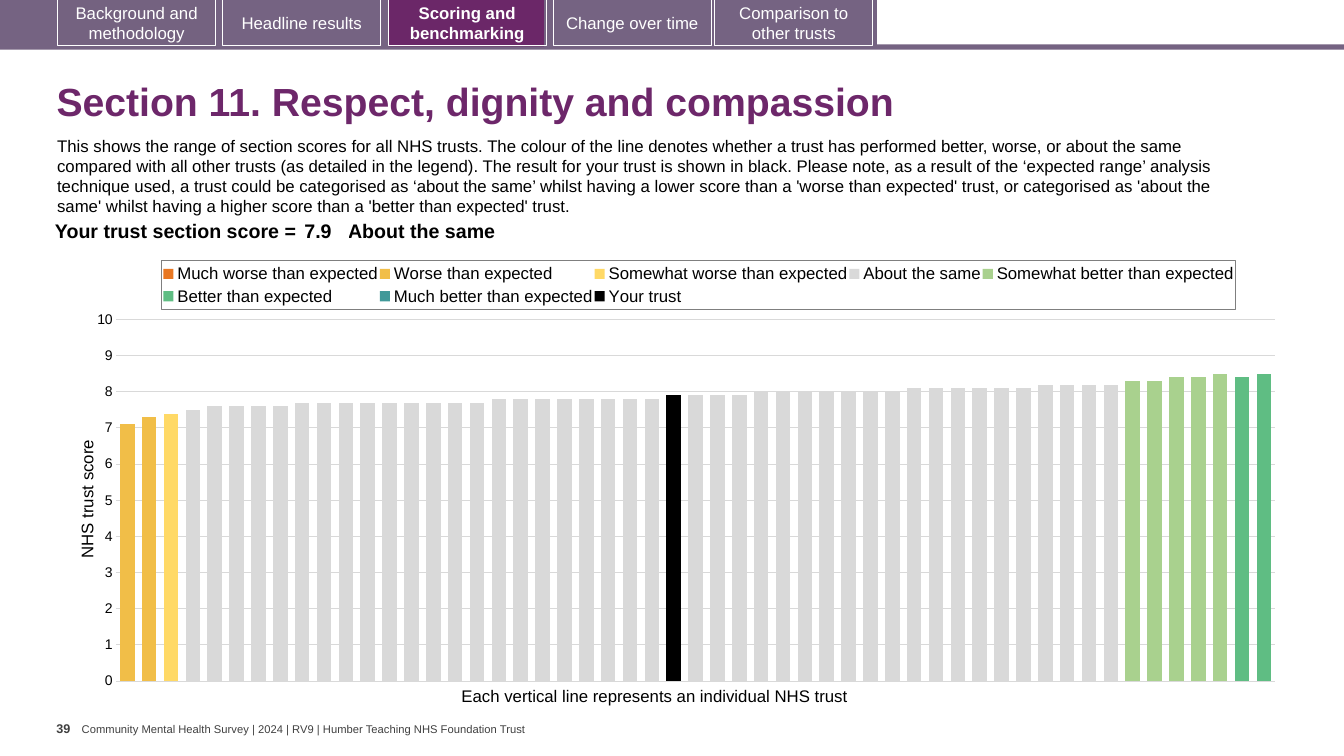
import copy
import lxml.etree
import pptx
import pptx.util
import pptx.chart.data
import pptx.dml.color
import pptx.enum.chart
import pptx.enum.shapes
import pptx.enum.text
import pptx.oxml
import pptx.oxml.ns

Cm = pptx.util.Cm
Pt = pptx.util.Pt
Rgb = pptx.dml.color.RGBColor.from_string
Align = pptx.enum.text.PP_ALIGN
Mid = pptx.enum.text.MSO_ANCHOR.MIDDLE
qn = pptx.oxml.ns.qn


class Look:
    face = "Arial"
    black, white, grey = "000000", "FFFFFF", "404040"
    purple, mauve, dusk, plum = "6D276A", "756382", "746280", "6B2768"
    grid, frame = "D9D9D9", "7F7F7F"
    title, score, text, tick, page, foot = 28, 14, 12, 10, 9, 8


def style(font, size, color, bold=False):
    font.name, font.size, font.bold = Look.face, Pt(size), bold
    font.color.rgb = Rgb(color)


def place(node, index, box, inner=False):
    for old in node.findall(qn("c:layout")):
        node.remove(old)
    layout = lxml.etree.Element(qn("c:layout"))
    manual = lxml.etree.SubElement(layout, qn("c:manualLayout"))
    pairs = [("layoutTarget", "inner")] if inner else []
    pairs += [("xMode", "edge"), ("yMode", "edge")] + list(zip("xywh", box))
    for tag, val in pairs:
        lxml.etree.SubElement(manual, qn("c:" + tag)).set("val", str(val))
    node.insert(index, layout)


deck = pptx.Presentation()
deck.slide_width, deck.slide_height = Cm(33.87), Cm(19.05)
slide = deck.slides.add_slide(deck.slide_layouts[5])
shapes = slide.shapes
rect = pptx.enum.shapes.MSO_SHAPE.RECTANGLE

bars = [
    (0, 1.12, 33.87, 0.13, Look.mauve),
    (0, 0, 22.1, 1.19, Look.mauve),
    (1.5, 0, 3.91, 1.17, Look.dusk),
    (9.8, 0, 3.91, 1.17, Look.plum),
]
for x, y, w, h, color in bars:
    bar = shapes.add_shape(rect, Cm(x), Cm(y), Cm(w), Cm(h))
    bar.shadow.inherit = False
    bar.fill.solid()
    bar.fill.fore_color.rgb = Rgb(color)
    bar.line.fill.background()

tabs = [
    (1.45, "Background and methodology", Look.dusk),
    (5.61, "Headline results", None),
    (9.78, "Scoring and benchmarking", None),
    (13.94, "Change over time", Look.mauve),
    (18.01, "Comparison to other trusts", Look.mauve),
]
for x, words, color in tabs:
    tab = shapes.add_shape(rect, Cm(x), Cm(-0.03), Cm(3.99), Cm(1.19))
    tab.shadow.inherit = False
    if color:
        tab.fill.solid()
        tab.fill.fore_color.rgb = Rgb(color)
    else:
        tab.fill.background()
    tab.line.color.rgb = Rgb(Look.white)
    tab.line.width = Pt(0.75)
    tab.text_frame.text = words
    tab.text_frame.vertical_anchor = Mid
    para = tab.text_frame.paragraphs[0]
    para.alignment = Align.CENTER
    style(para.runs[0].font, Look.text, Look.white, words.startswith("Scoring"))

title = shapes.title
title.left, title.top, title.width, title.height = Cm(1.17), Cm(1.7), Cm(31.72), Cm(1.83)
title.text_frame.text = "Section 11. Respect, dignity and compassion"
title.text_frame.vertical_anchor = Mid
title.text_frame.auto_size = pptx.enum.text.MSO_AUTO_SIZE.NONE
para = title.text_frame.paragraphs[0]
para.alignment, para.line_spacing = Align.LEFT, 0.9
style(para.runs[0].font, Look.title, Look.purple, True)

intro = (
    "This shows the range of section scores for all NHS trusts. The colour of the line denotes "
    "whether a trust has performed better, worse, or about the same compared with all other trusts "
    "(as detailed in the legend). The result for your trust is shown in black. Please note, as a "
    "result of the ‘expected range’ analysis technique used, a trust could be categorised as "
    "‘about the same’ whilst having a lower score than a 'worse than expected' trust, or categorised "
    "as 'about the same' whilst having a higher score than a 'better than expected' trust."
)
source = "Community Mental Health Survey | 2024 | RV9 | Humber Teaching NHS Foundation Trust"
axis = "Each vertical line represents an individual NHS trust"
notes = [
    (1.19, 3.28, 30.7, 2.31, intro, Look.text, Look.black, False, True, 0.25, 0.13),
    (11.38, 17.15, 10.44, 0.76, axis, Look.text, Look.black, False, False, 0.25, 0.13),
    (1.42, 18.03, 0.64, 1.02, "39", Look.page, Look.grey, True, False, 0, 0.13),
    (2.06, 18.19, 11.38, 0.33, source, Look.foot, Look.grey, False, False, 0, 0),
]
for x, y, w, h, words, size, color, bold, wrap, side, edge in notes:
    frame = shapes.add_textbox(Cm(x), Cm(y), Cm(w), Cm(h)).text_frame
    frame.text, frame.word_wrap = words, wrap
    frame.margin_left = frame.margin_right = Cm(side)
    frame.margin_top = frame.margin_bottom = Cm(edge)
    style(frame.paragraphs[0].runs[0].font, size, color, bold)

count = 53
same = [7.5] + [7.6] * 4 + [7.7] * 9 + [7.8] * 8 + [7.9] * 4 + [8] * 7 + [8.1] * 6 + [8.2] * 4
bands = [
    ("Much worse than expected", "E87722", 0, []),
    ("Worse than expected", "F1BE48", 0, [7.1, 7.3]),
    ("Somewhat worse than expected", "FFD966", 2, [7.4]),
    ("About the same", "D9D9D9", 3, same),
    ("Somewhat better than expected", "A9D18E", 46, [8.3, 8.3, 8.4, 8.4, 8.5]),
    ("Better than expected", "5FBD83", 51, [8.4, 8.5]),
    ("Much better than expected", "419999", 0, []),
    ("Your trust", Look.black, 25, [7.9]),
]
data = pptx.chart.data.CategoryChartData()
data.categories = [str(n + 1) for n in range(count)]
for name, color, start, vals in bands:
    data.add_series(name, [None] * start + vals + [None] * (count - start - len(vals)))
kind = pptx.enum.chart.XL_CHART_TYPE.COLUMN_CLUSTERED
chart = shapes.add_chart(kind, Cm(1.7), Cm(6.27), Cm(30.86), Cm(11.28), data).chart
style(chart.font, Look.tick, Look.black)
chart.font.name = "Calibri"
chart.has_title = False
plot = chart.plots[0]
plot.gap_width, plot.overlap, plot.vary_by_categories = 50, 100, False
for line, (name, color, start, vals) in zip(plot.series, bands):
    line.format.fill.solid()
    line.format.fill.fore_color.rgb = Rgb(color)

scale = chart.value_axis
chart.category_axis.visible = False
scale.minimum_scale, scale.maximum_scale, scale.major_unit = 0, 10, 1
scale.has_major_gridlines = False
scale.format.line.fill.background()
scale.tick_label_position = pptx.enum.chart.XL_TICK_LABEL_POSITION.NONE

area = chart._chartSpace.find(".//" + qn("c:plotArea"))
left = area.find(qn("c:barChart"))
right = copy.deepcopy(left)
for ser in right.findall(qn("c:ser"))[:-1]:
    right.remove(ser)
left.remove(left.findall(qn("c:ser"))[-1])
left.addnext(right)
cat, val = (copy.deepcopy(area.find(qn(tag))) for tag in ("c:catAx", "c:valAx"))
area.find(qn("c:valAx")).addnext(val)
val.addnext(cat)
ids = {node.get("val"): str(9001 + n) for n, node in enumerate(right.findall(qn("c:axId")))}
for part in (right, cat, val):
    for node in part.iterchildren(qn("c:axId"), qn("c:crossAx")):
        node.set("val", ids[node.get("val")])
val.find(qn("c:axPos")).set("val", "r")
val.find(qn("c:crosses")).set("val", "max")

scale.tick_label_position = pptx.enum.chart.XL_TICK_LABEL_POSITION.NEXT_TO_AXIS
scale.major_tick_mark = pptx.enum.chart.XL_TICK_MARK.NONE
scale.has_major_gridlines = True
scale.major_gridlines.format.line.color.rgb = Rgb(Look.grid)
scale.major_gridlines.format.line.width = Pt(0.75)
style(scale.tick_labels.font, Look.tick, Look.black)
label = scale.axis_title
label.text_frame.text = "NHS trust score"
style(label.text_frame.paragraphs[0].runs[0].font, Look.text, Look.black)
place(label._element, 1, (0.005, 0.42))
place(area, 0, (0.04, 0.158, 0.946, 0.808), True)

chart.has_legend = True
key = chart.legend
key.position = pptx.enum.chart.XL_LEGEND_POSITION.TOP
key.include_in_layout = False
style(key.font, Look.text, Look.black)
place(key._element, 1, (0.077, 0.026, 0.877, 0.11))
key._element.find(qn("c:overlay")).addnext(pptx.oxml.parse_xml(
    f'<c:spPr {pptx.oxml.ns.nsdecls("c", "a")}><a:ln w="9525"><a:solidFill>'
    f'<a:srgbClr val="{Look.frame}"/></a:solidFill></a:ln></c:spPr>'))

table = shapes.add_table(1, 3, Cm(0.89), Cm(5.46), Cm(29.7), Cm(0.79)).table
table.first_row = table.horz_banding = False
cells = [
    (6.68, "Your trust section score =", Align.RIGHT, 0.1),
    (1.2, "7.9", Align.LEFT, 0.1),
    (21.82, "About the same", Align.LEFT, 0),
]
for n, (width, words, align, side) in enumerate(cells):
    table.columns[n].width = Cm(width)
    cell = table.cell(0, n)
    cell.fill.background()
    cell.margin_left = cell.margin_right = Cm(side)
    cell.margin_top = cell.margin_bottom = Cm(0.1)
    cell.text_frame.text = words
    para = cell.text_frame.paragraphs[0]
    para.alignment = align
    style(para.runs[0].font, Look.score, Look.black, True)

deck.save("out.pptx")
